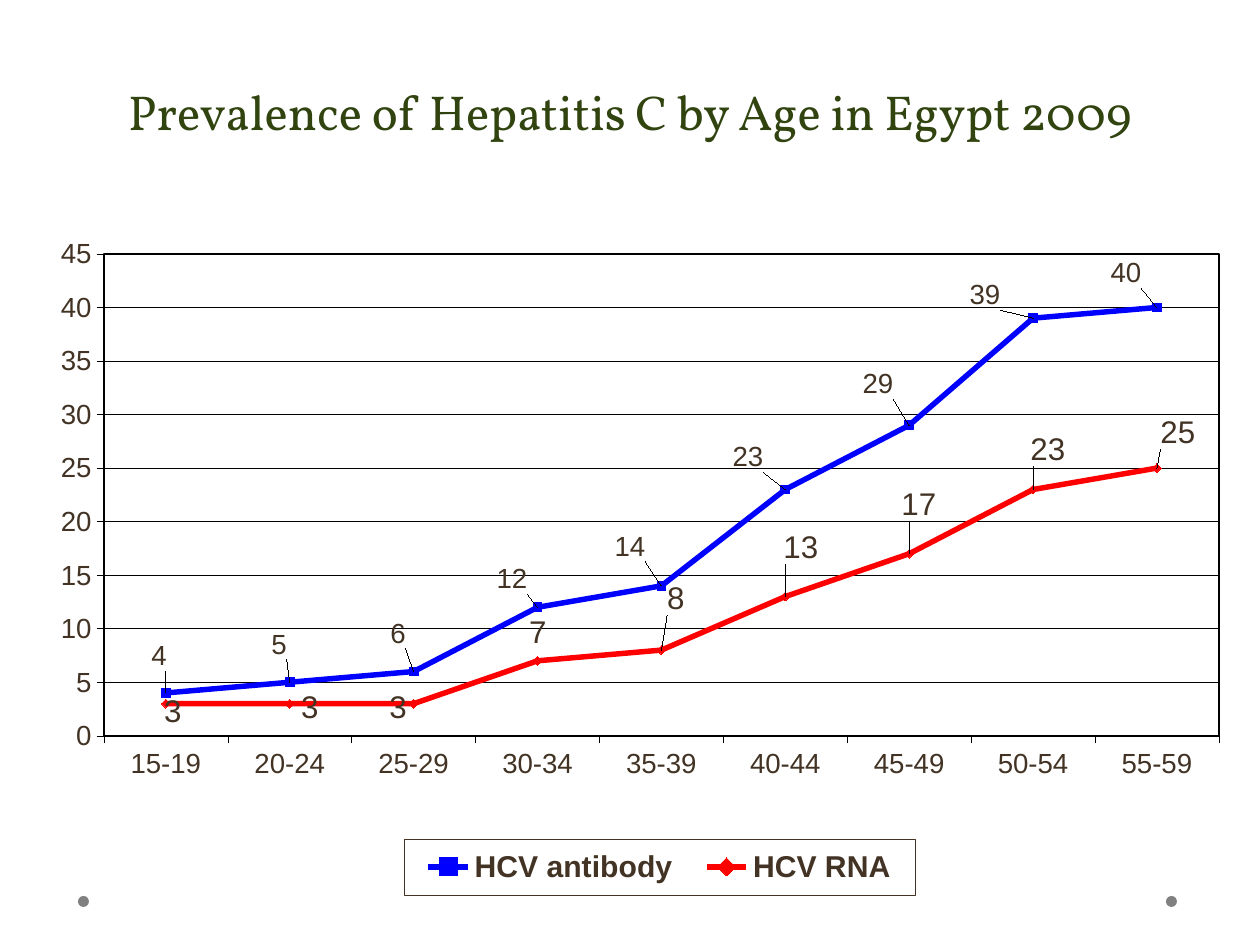
from lxml import etree
from pptx import Presentation
from pptx.chart.data import CategoryChartData
from pptx.dml.color import RGBColor
from pptx.enum.chart import XL_CHART_TYPE, XL_LABEL_POSITION, XL_LEGEND_POSITION, XL_TICK_MARK
from pptx.enum.shapes import MSO_SHAPE
from pptx.enum.text import MSO_ANCHOR, MSO_AUTO_SIZE, PP_ALIGN
from pptx.oxml import parse_xml
from pptx.util import Emu, Pt

LINE = XL_CHART_TYPE.LINE
CENTER_LABEL = XL_LABEL_POSITION.CENTER
BOTTOM = XL_LEGEND_POSITION.BOTTOM
OUTSIDE = XL_TICK_MARK.OUTSIDE
OVAL = MSO_SHAPE.OVAL
ANCHOR_BOTTOM = MSO_ANCHOR.BOTTOM
NO_FIT = MSO_AUTO_SIZE.NONE
CENTER = PP_ALIGN.CENTER

PX = 914400 / 126
COLORS = {"title": "314410", "text": "423324", "axis": "000000", "dot": "808080",
          "HCV antibody": "0000FF", "HCV RNA": "FF0000"}
NS = ('xmlns:c="http://schemas.openxmlformats.org/drawingml/2006/chart" '
      'xmlns:a="http://schemas.openxmlformats.org/drawingml/2006/main"')

# Chart frame and plot area in px
LEFT, TOP, WIDTH, HEIGHT = 18, 207, 1215, 694
PLOT_X, PLOT_Y, PLOT_W, PLOT_H = 104, 254, 1115, 482
Y_MAX = 45

AGES = [f"{age}-{age + 4}" for age in range(15, 60, 5)]
# Name, label size, values, label centres in px
SERIES = [
    ("HCV antibody", 15.8, [4, 5, 6, 12, 14, 23, 29, 39, 40],
     [(159, 656), (279, 645), (398, 634), (512, 579), (630, 547),
      (748, 457), (878, 384), (985, 295), (1126, 273)]),
    ("HCV RNA", 17.9, [3, 3, 3, 7, 8, 13, 17, 23, 25],
     [(173, 711), (310, 708), (398, 708), (538, 632), (676, 598),
      (801, 547), (919, 504), (1048, 449), (1178, 432)]),
]


def set_font(font, size, color, name="Arial", bold=False):
    font.size = Pt(size)
    font.name = name
    font.bold = bold
    font.color.rgb = RGBColor.from_string(COLORS[color])


def manual_layout(x, y, w=None, h=None, target=""):
    """Chart layout from px lengths, as fractions of the chart frame."""
    layout = etree.fromstring(f"<c:layout {NS}><c:manualLayout/></c:layout>")
    items = [("layoutTarget", target)] if target else []
    if w:
        items += [("xMode", "edge"), ("yMode", "edge")]
    items += [("x", x / WIDTH), ("y", y / HEIGHT)]
    if w:
        items += [("w", w / WIDTH), ("h", h / HEIGHT)]
    for tag, val in items:
        text = val if isinstance(val, str) else f"{val:.4f}"
        layout[0].append(etree.fromstring(f'<c:{tag} {NS} val="{text}"/>'))
    return parse_xml(etree.tostring(layout))


prs = Presentation()
prs.slide_width, prs.slide_height = Emu(round(1260 * PX)), Emu(round(945 * PX))
s = prs.slides.add_slide(prs.slide_layouts[5])

# Corner dots
for x in (1166, 78):
    sp = s.shapes.add_shape(OVAL, *(Emu(round(v * PX)) for v in (x, 896, 11, 11)))
    sp.shadow.inherit = False
    sp.fill.solid()
    sp.fill.fore_color.rgb = RGBColor.from_string(COLORS["dot"])
    sp.line.fill.background()

# Title
title = s.shapes.title
title.left, title.top, title.width, title.height = (
    Emu(round(v * PX)) for v in (0, -10, 1260, 157))
tf = title.text_frame
tf.text = "Prevalence of Hepatitis C by Age in Egypt 2009"
tf.auto_size = NO_FIT
tf.vertical_anchor = ANCHOR_BOTTOM
p = tf.paragraphs[0]
p.alignment = CENTER
p.line_spacing = Pt(58)
set_font(p.runs[0].font, 28, "title", "Vollkorn")

# Line chart
data = CategoryChartData()
data.categories = AGES
for name, size, values, centres in SERIES:
    data.add_series(name, values)
frame = [Emu(round(v * PX)) for v in (LEFT, TOP, WIDTH, HEIGHT)]
chart = s.shapes.add_chart(LINE, *frame, data).chart
chart.has_title = False
set_font(chart.font, 18.8, "axis", bold=True)
chart.plots[0].vary_by_categories = False

# Axes and gridlines
value_axis = chart.value_axis
value_axis.minimum_scale, value_axis.maximum_scale, value_axis.major_unit = 0, Y_MAX, 5
value_axis.has_major_gridlines = True
for axis in (chart.category_axis, value_axis):
    axis.major_tick_mark = OUTSIDE
    set_font(axis.tick_labels.font, 15.8, "text")
for part in (chart.category_axis, value_axis, value_axis.major_gridlines):
    part.format.line.width = Pt(0.25)
    part.format.line.color.rgb = RGBColor.from_string(COLORS["axis"])

# Series and labels, each label shifted from its point
step = PLOT_W / len(AGES)
for series, (name, size, values, centres) in zip(chart.plots[0].series, SERIES):
    series.smooth = False
    series.marker.style = None
    series.format.line.width = Pt(3.13)
    series.format.line.color.rgb = RGBColor.from_string(COLORS[name])
    for i, value in enumerate(values):
        label = series.points[i].data_label
        set_font(label.font, size, "text")
        label.position = CENTER_LABEL
    labels = series.data_labels
    labels.show_value = True
    set_font(labels.font, size, "text")
    for i, idx in enumerate(labels._element.xpath("c:dLbl/c:idx")):
        point_x = PLOT_X + step * (i + 0.5)
        point_y = PLOT_Y + PLOT_H * (1 - values[i] / Y_MAX)
        idx.addnext(manual_layout(centres[i][0] - point_x, centres[i][1] - point_y))

# Legend
chart.has_legend = True
legend = chart.legend
legend.position = BOTTOM
legend.include_in_layout = False
set_font(legend.font, 17.2, "text", bold=True)

# Plot area and legend places and borders
plot_area = chart.element.xpath("c:chart/c:plotArea")[0]
legend_el = chart.element.xpath("c:chart/c:legend")[0]
for old in plot_area.xpath("c:layout") + legend_el.xpath("c:layout"):
    old.getparent().remove(old)
plot_area.insert(0, manual_layout(PLOT_X - LEFT, PLOT_Y - TOP, PLOT_W, PLOT_H, "inner"))
legend_el.xpath("c:legendPos")[0].addnext(manual_layout(404 - LEFT, 839 - TOP, 511, 56))
border = ('<c:spPr {}><a:noFill/><a:ln w="{}"><a:solidFill><a:srgbClr val="{}"/>'
          '</a:solidFill></a:ln></c:spPr>')
plot_area.append(parse_xml(border.format(NS, Pt(1), COLORS["axis"])))
legend_el.xpath("c:txPr")[0].addprevious(
    parse_xml(border.format(NS, Pt(0.25), COLORS["text"])))

prs.save("out.pptx")
